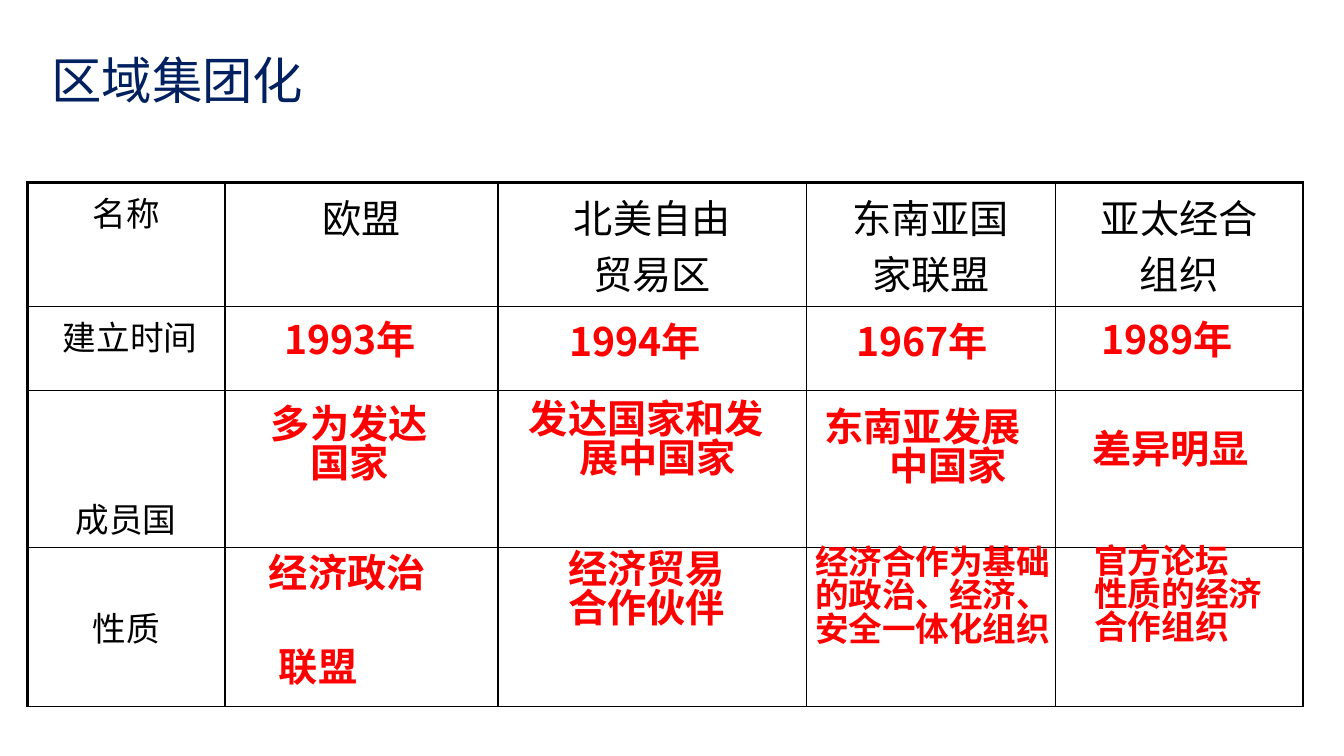
from lxml import etree
from pptx import Presentation
from pptx.dml.color import RGBColor
from pptx.enum import text as t
from pptx.oxml import ns
from pptx.util import Cm, Pt

FONT = "Noto Sans CJK SC"
BLACK = RGBColor(0x00, 0x00, 0x00)
RED = RGBColor(0xFF, 0x00, 0x00)
NAVY = RGBColor(0x00, 0x20, 0x60)
LEFT, CENTER = t.PP_ALIGN.LEFT, t.PP_ALIGN.CENTER
TOP, MIDDLE, BOTTOM = t.MSO_ANCHOR.TOP, t.MSO_ANCHOR.MIDDLE, t.MSO_ANCHOR.BOTTOM
TIGHT = 0.83  # line spacing of the title and the answers
HANG = 1.27

TITLE = "区域集团化"
TABLE_LEFT, TABLE_TOP = 0.69, 4.6
COLUMNS = [4.98, 6.88, 7.77, 6.27, 6.25]
ROWS = [3.1, 2.13, 3.96, 3.99]

# row, column, lines, size, colour, anchor, shift of the centre in cm
CELLS = [
    (0, 0, ["名称"], 24, BLACK, TOP, 0),
    (0, 1, ["欧盟"], 28, BLACK, TOP, 0),
    (0, 2, ["北美自由", "贸易区"], 28, BLACK, TOP, 0),
    (0, 3, ["东南亚国", "家联盟"], 28, BLACK, TOP, 0),
    (0, 4, ["亚太经合", "组织"], 28, BLACK, TOP, 0),
    (1, 0, ["建立时间"], 24, BLACK, TOP, 0.1),
    (1, 3, ["1967年"], 28, RED, TOP, -0.22),
    (2, 0, ["成员国"], 24, BLACK, BOTTOM, 0),
    (3, 0, ["性质"], 24, BLACK, MIDDLE, 0),
]

# left, top, width, height, lines, size, alignment, hanging indent, wrap
ANSWERS = [
    (6.91, 8.03, 5.33, 1.45, ["1993年"], 28, LEFT, HANG, True),
    (14.1, 8.08, 5.33, 1.45, ["1994年"], 28, LEFT, HANG, True),
    (27.51, 8.03, 5.33, 1.45, ["1989年"], 28, LEFT, HANG, True),
    (5.74, 10.13, 6.12, 2.64, ["多为发达", "国家"], 28, CENTER, HANG, True),
    (13.08, 10.01, 6.5, 2.64, ["发达国家和发展中国家"], 28, LEFT, HANG, True),
    (26.44, 10.77, 6.12, 1.45, ["差异明显"], 28, CENTER, HANG, True),
    (20.29, 10.21, 5.92, 2.64, ["东南亚发展中国家"], 28, CENTER, HANG, True),
    (20.29, 13.67, 6.53, 4.11,
     ["经济合作为基础", "的政治、经济、", "安全一体化组织"], 24, LEFT, 0, False),
    (14.07, 13.79, 4.52, 3.43, ["经济贸易", "合作伙伴"], 28, LEFT, 0, False),
    (6.53, 13.89, 5.33, 2.9, ["经济政治", "联盟"], 28, LEFT, 0, True),
    (27.33, 13.64, 4.8, 3.33,
     ["官方论坛", "性质的经济", "合作组织"], 24, LEFT, 0, False),
]


def write(frame, lines, size, color, align=LEFT, bold=False, hang=0, spacing=None):
    """Fill a text frame, one paragraph per line, and return the paragraphs."""
    for index, line in enumerate(lines):
        paragraph = frame.paragraphs[0] if index == 0 else frame.add_paragraph()
        paragraph.alignment = align
        paragraph.space_before = Pt(0)
        if spacing:
            paragraph.line_spacing = spacing
        set_indent(paragraph, hang, -hang)
        run = paragraph.add_run()
        run.text = line
        run.font.size = Pt(size)
        run.font.bold = bold
        run.font.color.rgb = color
        run.font.name = FONT
        east_asian = etree.SubElement(run.font._element, ns.qn("a:ea"))
        east_asian.set("typeface", FONT)
    return frame.paragraphs


def set_indent(paragraph, left, first):
    properties = paragraph._p.get_or_add_pPr()
    properties.set("marL", str(Cm(left)))
    properties.set("indent", str(Cm(first)))


def set_borders(cell, widths):
    """Draw black borders; widths are points for left, right, top and bottom."""
    properties = cell._tc.get_or_add_tcPr()
    for index, (side, width) in enumerate(zip("LRTB", widths)):
        line = etree.Element(ns.qn(f"a:ln{side}"), w=str(Pt(width)))
        fill = etree.SubElement(line, ns.qn("a:solidFill"))
        etree.SubElement(fill, ns.qn("a:srgbClr"), val=str(BLACK))
        properties.insert(index, line)


def add_comparison_table(slide):
    frame = slide.shapes.add_table(
        len(ROWS), len(COLUMNS), Cm(TABLE_LEFT), Cm(TABLE_TOP),
        Cm(sum(COLUMNS)), Cm(sum(ROWS)))
    table = frame.table
    table.first_row = table.horz_banding = False
    for column, width in zip(table.columns, COLUMNS):
        column.width = Cm(width)
    for row, height in zip(table.rows, ROWS):
        row.height = Cm(height)
    last = len(COLUMNS) - 1
    for r in range(len(ROWS)):
        for c in range(len(COLUMNS)):
            cell = table.cell(r, c)
            cell.fill.background()
            set_borders(cell, (2 if c == 0 else 1, 2 if c == last else 1,
                               2 if r == 0 else 1, 1))
    for r, c, lines, size, color, anchor, shift in CELLS:
        cell = table.cell(r, c)
        cell.vertical_anchor = anchor
        cell.margin_left = Cm(0.33 + max(2 * shift, 0))
        cell.margin_right = Cm(0.33 + max(-2 * shift, 0))
        cell.margin_top = cell.margin_bottom = Cm(0.13)
        paragraphs = write(cell.text_frame, lines, size, color, CENTER, color == RED)
        if lines[-1] == "家联盟":
            set_indent(paragraphs[-1], 0, -0.4)


def add_answers(slide):
    for left, top, width, height, lines, size, align, hang, wrap in ANSWERS:
        box = slide.shapes.add_textbox(Cm(left), Cm(top), Cm(width), Cm(height))
        box.text_frame.word_wrap = wrap
        paragraphs = write(box.text_frame, lines, size, RED, align, True, hang, TIGHT)
        if lines[-1] == "联盟":
            paragraphs[-1].space_before = Pt(39)
            set_indent(paragraphs[-1], 0.25, 0)


def main():
    presentation = Presentation()
    presentation.slide_width, presentation.slide_height = Cm(33.87), Cm(19.05)
    slide = presentation.slides.add_slide(presentation.slide_layouts[5])
    title = slide.shapes.title
    title.left, title.top, title.width, title.height = Cm(1.04), Cm(1.37), Cm(20), Cm(1.8)
    title.text_frame.vertical_anchor = TOP
    title.text_frame.auto_size = t.MSO_AUTO_SIZE.NONE
    write(title.text_frame, [TITLE], 36, NAVY, spacing=TIGHT)
    add_comparison_table(slide)
    add_answers(slide)
    presentation.save("out.pptx")


if __name__ == "__main__":
    main()
